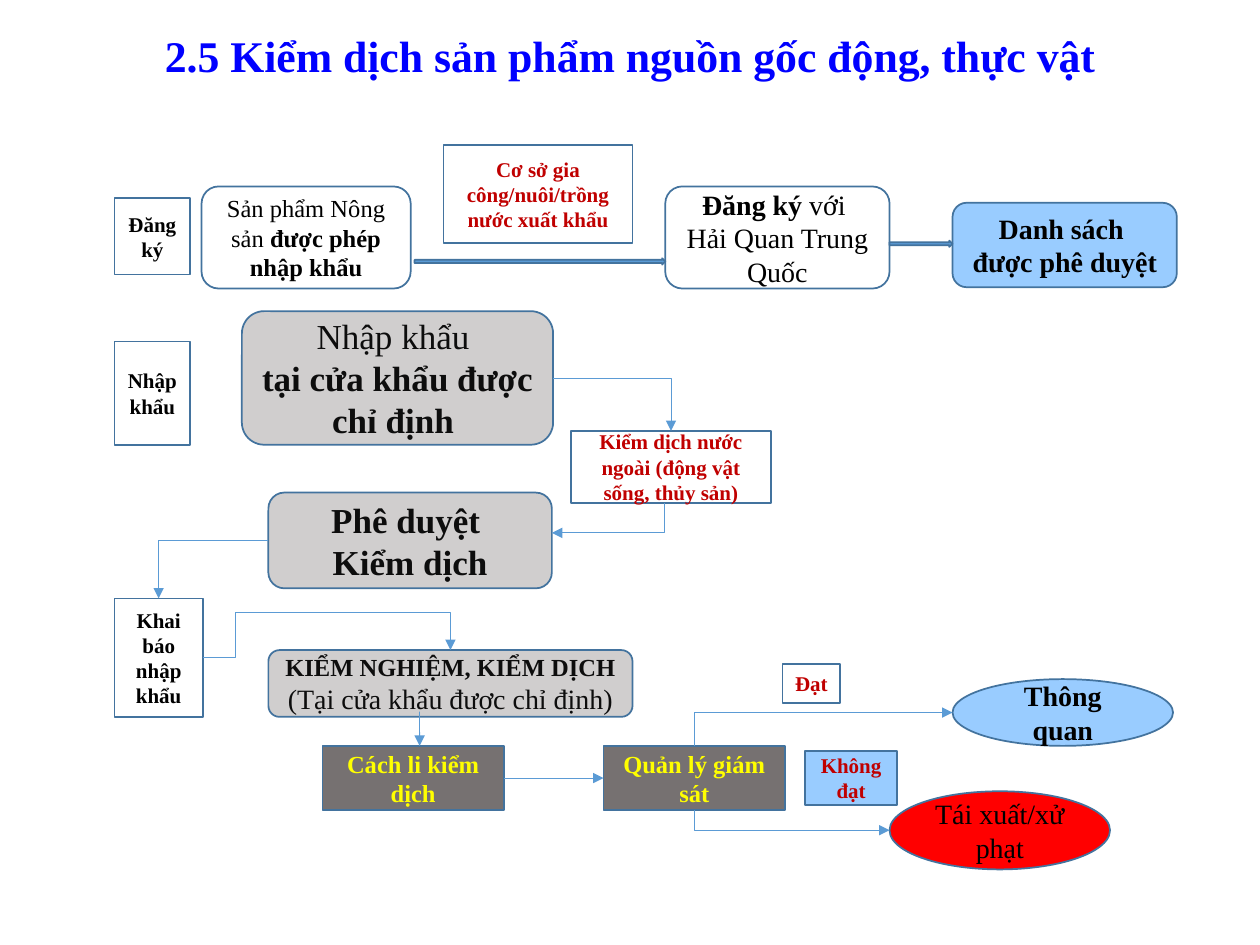
import pptx
import pptx.util
import pptx.dml.color
import pptx.enum.shapes
import pptx.enum.text
import pptx.oxml.ns
from lxml import etree

Inches, Pt = pptx.util.Inches, pptx.util.Pt
RGBColor = pptx.dml.color.RGBColor
Shape = pptx.enum.shapes.MSO_SHAPE
Connector = pptx.enum.shapes.MSO_CONNECTOR
qn = pptx.oxml.ns.qn

FONT = "Times New Roman"
WHITE = RGBColor(0xFF, 0xFF, 0xFF)
BLACK = RGBColor(0, 0, 0)
INK = RGBColor(0x0D, 0x0D, 0x0D)
TITLE_BLUE = RGBColor(0, 0, 0xFF)
OUTLINE = RGBColor(0x43, 0x73, 0x9E)
ARROW_BLUE = RGBColor(0x5B, 0x9B, 0xD5)
SKY = RGBColor(0x99, 0xCC, 0xFF)
LIGHT_GREY = RGBColor(0xD0, 0xCE, 0xCE)
DARK_GREY = RGBColor(0x76, 0x71, 0x71)
RED = RGBColor(0xFF, 0, 0)
DARK_RED = RGBColor(0xC0, 0, 0)
YELLOW = RGBColor(0xFF, 0xFF, 0)

# Column edges shared by the boxes, in inches
STAGE, STEP, CHECK, AGENCY, RESULT = 0.91, 2.13, 4.79, 5.28, 7.56

TITLE = "2.5 Kiểm dịch sản phẩm nguồn gốc động, thực vật"

# Kind of box: preset, fill, text colour, size, bold
STYLES = {
    "stage": (Shape.RECTANGLE, WHITE, BLACK, 12, True),
    "note": (Shape.RECTANGLE, WHITE, DARK_RED, 12, True),
    "fail note": (Shape.RECTANGLE, SKY, DARK_RED, 12, True),
    "control": (Shape.RECTANGLE, DARK_GREY, YELLOW, 14, True),
    "product": (Shape.ROUNDED_RECTANGLE, WHITE, BLACK, 14, False),
    "agency": (Shape.ROUNDED_RECTANGLE, WHITE, BLACK, 16, False),
    "list": (Shape.ROUNDED_RECTANGLE, SKY, BLACK, 16, True),
    "step": (Shape.ROUNDED_RECTANGLE, LIGHT_GREY, INK, 20, True),
    "pass": (Shape.OVAL, SKY, BLACK, 16, True),
    "fail": (Shape.OVAL, RED, BLACK, 16, False),
    "arrow": (Shape.RIGHT_ARROW, ARROW_BLUE, BLACK, 12, False),
}

# Name: style, (left, top, width, height), paragraphs.
# A paragraph is a list of runs: text, then the formats that differ.
BOXES = {
    "product": ("product", (1.6, 1.48, 1.66, 0.81),
                [[("Sản phẩm Nông sản ", {}),
                  ("được phép nhập khẩu", {"bold": True})]]),
    "agency": ("agency", (AGENCY, 1.48, 1.78, 0.81),
               [[("Đăng ký ", {"bold": True}), ("với ", {})],
                [("Hải Quan Trung Quốc", {})]]),
    "approved list": ("list", (RESULT, 1.61, 1.78, 0.67),
                      [[("Danh sách ", {})], [("được phê duyệt ", {})]]),
    "import": ("step", (1.92, 2.47, 2.47, 1.06),
               [[("Nhập khẩu ", {"bold": False})],
                [("tại cửa khẩu được chỉ định ", {})]]),
    "approval": ("step", (STEP, 3.91, 2.25, 0.76),
                 [[("Phê duyệt ", {})], [("Kiểm dịch", {})]]),
    "facility": ("note", (3.52, 1.15, 1.5, 0.78),
                 [[("Cơ sở gia công/nuôi/trồng nước xuất khẩu", {})]]),
    "foreign check": ("note", (4.53, 3.42, 1.59, 0.57),
                      [[("Kiểm dịch nước ngoài (động vật sống, thủy sản)", {})]]),
    "to agency": ("arrow", (3.29, 2.05, 1.99, 0.05), []),
    "to list": ("arrow", (7.06, 1.91, 0.5, 0.05), []),
    "testing": ("step", (STEP, 5.16, 2.89, 0.53),
                [[("KIỂM NGHIỆM, KIỂM DỊCH ", {"size": 14})],
                 [("(Tại cửa khẩu được chỉ định)", {"size": 16, "bold": False})]]),
    "declaration": ("stage", (STAGE, 4.75, 0.7, 0.94), [[("Khai báo nhập khẩu", {})]]),
    "registration": ("stage", (STAGE, 1.57, 0.6, 0.61), [[("Đăng ký", {})]]),
    "import stage": ("stage", (STAGE, 2.71, 0.6, 0.82), [[("Nhập khẩu", {})]]),
    "isolation": ("control", (2.56, 5.92, 1.44, 0.51), [[("Cách li kiểm dịch", {})]]),
    "supervision": ("control", (CHECK, 5.92, 1.44, 0.51), [[("Quản lý giám sát", {})]]),
    "cleared": ("pass", (RESULT, 5.39, 1.75, 0.53), [[("Thông quan", {})]]),
    "returned": ("fail", (7.06, 6.28, 1.75, 0.62), [[("Tái xuất/xử phạt", {})]]),
    "pass note": ("note", (6.21, 5.27, 0.46, 0.31), [[("Đạt", {})]]),
    "fail note": ("fail note", (6.39, 5.96, 0.73, 0.43), [[("Không đạt", {})]]),
}

# Elbows run level from the first point, then upright to the second.
# A point is a box name with shares of its width and height.
ELBOWS = [
    (("import", 1, 0.5), ("foreign check", 0.5, 0), "tailEnd"),
    (("approval", 1, 0.42), ("foreign check", 0.47, 1), "headEnd"),
    (("approval", 0, 0.5), ("declaration", 0.5, 0), "tailEnd"),
    (("cleared", 0, 0.5), ("supervision", 0.5, 0), "headEnd"),
    (("returned", 0, 0.5), ("supervision", 0.5, 1), "headEnd"),
]
DETOUR = (("declaration", 1, 0.5), ("testing", 0.5, 0))
DETOUR_CORNER = (1.87, 4.86)


def write_text(frame, paragraphs, color, size, bold):
    """Fill a text frame with centred paragraphs of formatted runs."""
    frame.word_wrap = True
    frame.vertical_anchor = pptx.enum.text.MSO_ANCHOR.MIDDLE
    for index, runs in enumerate(paragraphs):
        paragraph = frame.add_paragraph() if index else frame.paragraphs[0]
        paragraph.alignment = pptx.enum.text.PP_ALIGN.CENTER
        for text, changes in runs:
            run = paragraph.add_run()
            run.text = text
            run.font.name = FONT
            run.font.size = Pt(changes.get("size", size))
            run.font.bold = changes.get("bold", bold)
            run.font.color.rgb = color


def add_box(slide, style, box, paragraphs):
    preset, fill, color, size, bold = STYLES[style]
    shape = slide.shapes.add_shape(preset, *map(Inches, box))
    shape.shadow.inherit = False
    shape.fill.solid()
    shape.fill.fore_color.rgb = fill
    shape.line.color.rgb = OUTLINE
    shape.line.width = Pt(1)
    write_text(shape.text_frame, paragraphs, color, size, bold)
    return shape


def locate(name, across, down):
    left, top, width, height = BOXES[name][1]
    return left + across * width, top + down * height


def add_arrow(slide, begin, end, arrow_end="tailEnd", preset=None, adjustments=()):
    kind = Connector.ELBOW if preset else Connector.STRAIGHT
    connector = slide.shapes.add_connector(
        kind, *map(Inches, locate(*begin) + locate(*end)))
    connector.line.color.rgb = ARROW_BLUE
    connector.line.width = Pt(0.5)
    properties = connector._element.spPr
    etree.SubElement(properties.find(qn("a:ln")), qn("a:" + arrow_end), type="triangle")
    etree.SubElement(properties, qn("a:effectLst"))
    if preset:
        geometry = properties.find(qn("a:prstGeom"))
        geometry.set("prst", preset)
        values = geometry.find(qn("a:avLst"))
        for number, share in enumerate(adjustments, 1):
            etree.SubElement(values, qn("a:gd"), name=f"adj{number}",
                             fmla=f"val {round(share * 100000)}")
    return connector


def main():
    presentation = pptx.Presentation()
    presentation.slide_width, presentation.slide_height = Inches(10), Inches(7.5)
    slide = presentation.slides.add_slide(presentation.slide_layouts[5])

    # Title across the whole width
    title = slide.shapes.title
    title.left, title.top, title.width, title.height = map(Inches, (0, 0.17, 10, 0.53))
    write_text(title.text_frame, [[(TITLE, {})]], TITLE_BLUE, 25, True)

    # Boxes and block arrows
    shapes = {name: add_box(slide, *content) for name, content in BOXES.items()}

    # Elbow arrows, and the one that climbs over before coming down
    for begin, end, arrow_end in ELBOWS:
        add_arrow(slide, begin, end, arrow_end, "bentConnector2")
    start, finish = (locate(*point) for point in DETOUR)
    shares = [(corner - first) / (last - first)
              for corner, first, last in zip(DETOUR_CORNER, start, finish)]
    add_arrow(slide, *DETOUR, preset="bentConnector4", adjustments=shares)

    # Straight arrows
    add_arrow(slide, ("testing", 0.415, 0.92), ("isolation", 0.535, 0))
    link = add_arrow(slide, ("isolation", 1, 0.5), ("supervision", 0, 0.5))
    link.begin_connect(shapes["isolation"], 3)
    link.end_connect(shapes["supervision"], 1)

    presentation.save("out.pptx")


if __name__ == "__main__":
    main()
